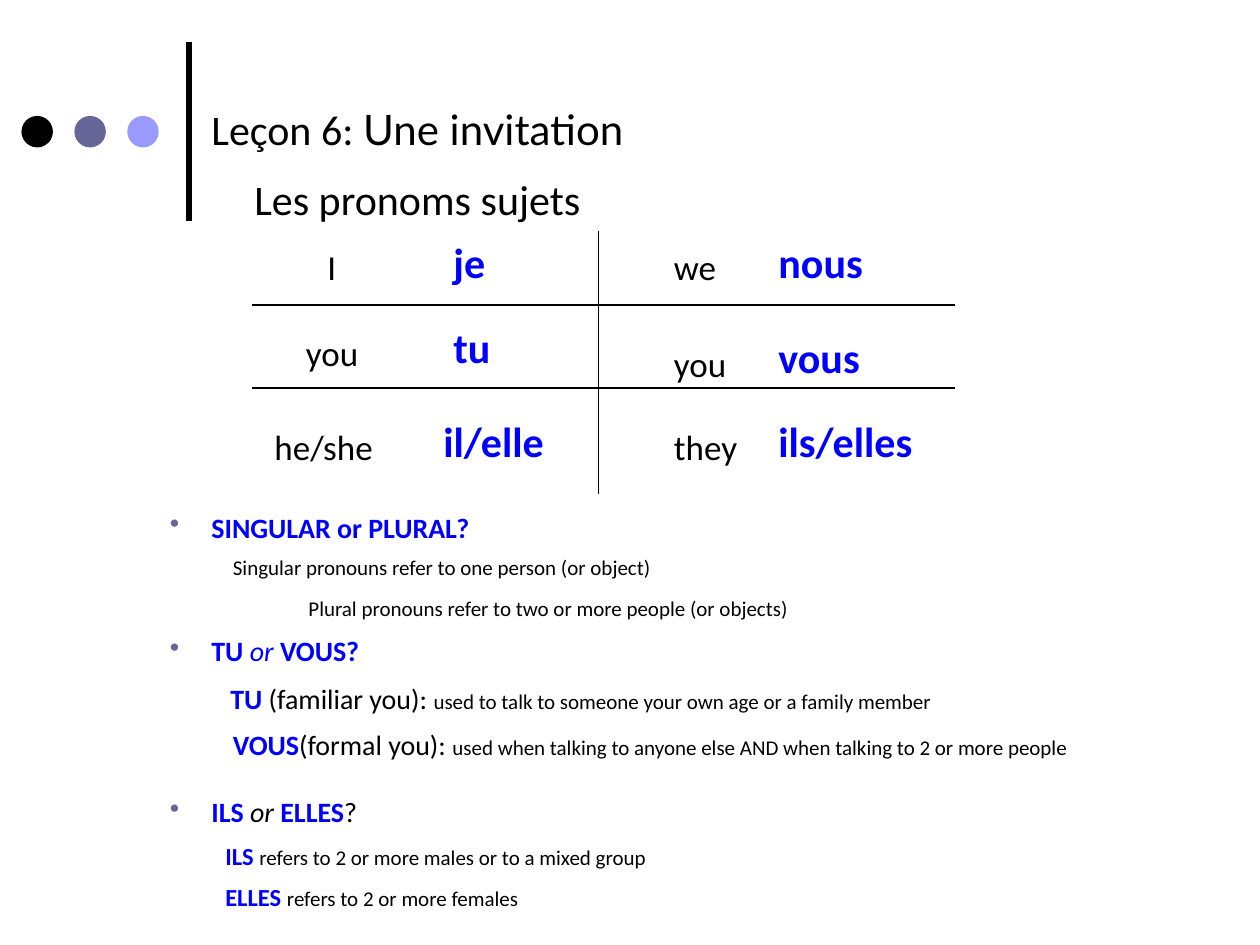
from lxml import etree
from pptx import Presentation
from pptx.dml.color import RGBColor
from pptx.enum import shapes
from pptx.oxml import ns
from pptx.util import Inches, Pt

BLACK = RGBColor(0, 0, 0)
BLUE = RGBColor(0, 0, 255)
SLATE = RGBColor(0x66, 0x66, 0x99)
LILAC = RGBColor(0x99, 0x99, 0xFF)

prs = Presentation()
prs.slide_width, prs.slide_height = Inches(10), Inches(7.5)
slide = prs.slides.add_slide(prs.slide_layouts[6])


def add_line(x1, y1, x2, y2, width):
    line = slide.shapes.add_connector(
        shapes.MSO_CONNECTOR.STRAIGHT, Inches(x1), Inches(y1), Inches(x2), Inches(y2))
    line.line.color.rgb = BLACK
    line.line.width = Pt(width)
    etree.SubElement(line._element.spPr, ns.qn("a:effectLst"))


def add_text(left, top, width, height, paras):
    """Each paragraph is (indent, space before, bulleted, runs);
    each run is (text, size, colour, style letters, optional font)."""
    box = slide.shapes.add_textbox(Inches(left), Inches(top), Inches(width), Inches(height))
    frame = box.text_frame
    frame.word_wrap = True
    for i, (indent, space, bullet, runs) in enumerate(paras):
        para = frame.add_paragraph() if i else frame.paragraphs[0]
        para.space_before = Pt(space)
        props = para._p.get_or_add_pPr()
        props.set("marL", str(Inches(indent)))
        if bullet:
            props.set("indent", str(-Inches(indent)))
            tint = etree.SubElement(props, ns.qn("a:buClr"))
            etree.SubElement(tint, ns.qn("a:srgbClr")).set("val", str(SLATE))
            etree.SubElement(props, ns.qn("a:buChar")).set("char", "•")
        for words, size, color, style, *font in runs:
            run = para.add_run()
            run.text = words
            run.font.name = font[0] if font else "Calibri"
            run.font.size = Pt(size)
            run.font.color.rgb = color
            run.font.bold = "b" in style
            run.font.italic = "i" in style


# Side rule and dots
add_line(1.5, 0.33, 1.5, 1.75, 3)
for i, color in enumerate((BLACK, SLATE, LILAC)):
    dot = slide.shapes.add_shape(
        shapes.MSO_SHAPE.OVAL, Inches(0.17 + 0.42 * i), Inches(0.92), Inches(0.25), Inches(0.25))
    dot.shadow.inherit = False
    dot.fill.solid()
    dot.fill.fore_color.rgb = color
    dot.line.fill.background()

# Titles
add_text(1.58, 0.77, 7.5, 0.51, [(0, 0, False, [
    ("Leçon 6: ", 24, BLACK, ""), ("Une invitation", 24, BLACK, "", "Lato")])])
add_text(1.92, 1.33, 6.25, 0.5, [(0, 0, False, [("Les pronoms sujets", 24, BLACK, "")])])

# Pronoun grid
add_line(4.75, 1.83, 4.75, 3.92, 0.75)
for y in (2.42, 3.08):
    add_line(2, y, 7.58, y, 0.75)

english = [
    ("I", 2.5, 1.9, 0.58), ("you", 2.33, 2.58, 0.75), ("he/she", 2.08, 3.33, 1.25),
    ("we", 5.25, 1.9, 1.08), ("you", 5.25, 2.67, 1.08), ("they", 5.25, 3.33, 0.92),
]
french = [
    ("je", 3.5, 1.83, 1.08), ("tu", 3.5, 2.5, 1.08), ("il/elle", 3.42, 3.25, 1.25),
    ("nous", 6.08, 1.83, 1.5), ("vous", 6.08, 2.58, 1.08), ("ils/elles", 6.08, 3.25, 1.5),
]
for words, size, color, style, height in ((english, 20, BLACK, "", 0.43),
                                          (french, 24, BLUE, "b", 0.5)):
    for word, left, top, width in words:
        add_text(left, top, width, height, [(0, 0, False, [(word, size, color, style)])])

# Notes
add_text(1.25, 4, 6.5, 1.02, [
    (0.33, 0, True, [("SINGULAR or PLURAL?", 16, BLUE, "b")]),
    (0.5, 6, False, [("Singular pronouns refer to one person (or object)", 12, BLACK, "")]),
    (1.1, 9, False, [("Plural pronouns refer to two or more people (or objects)", 12, BLACK, "")]),
])
add_text(1.25, 4.98, 8.67, 1.52, [
    (0.33, 0, True, [("TU ", 16, BLUE, "b"), ("or", 16, BLUE, "i"), (" VOUS?", 16, BLUE, "b")]),
    (0.48, 8, False, [
        ("TU ", 16, BLUE, "b"), ("(familiar you): ", 16, BLACK, ""),
        ("used to talk to someone your own age or a family member", 12, BLACK, "")]),
    (0.5, 7.5, False, [
        ("VOUS", 16, BLUE, "b"), ("(formal you): ", 16, BLACK, ""),
        ("used when talking to anyone else AND when talking to 2 or more people",
         12, BLACK, "")]),
])
add_text(1.25, 6.26, 6.5, 1.08, [
    (0.33, 0, True, [("ILS ", 16, BLUE, "b"), ("or ", 16, BLACK, "i"),
                     ("ELLES", 16, BLUE, "b"), ("?", 16, BLACK, "")]),
    (0.44, 7, False, [("ILS ", 14, BLUE, "b"),
                      ("refers to 2 or more males or to a mixed group", 12, BLACK, "")]),
    (0.44, 7, False, [("ELLES ", 14, BLUE, "b"),
                      ("refers to 2 or more females", 12, BLACK, "")]),
])

prs.save("out.pptx")
